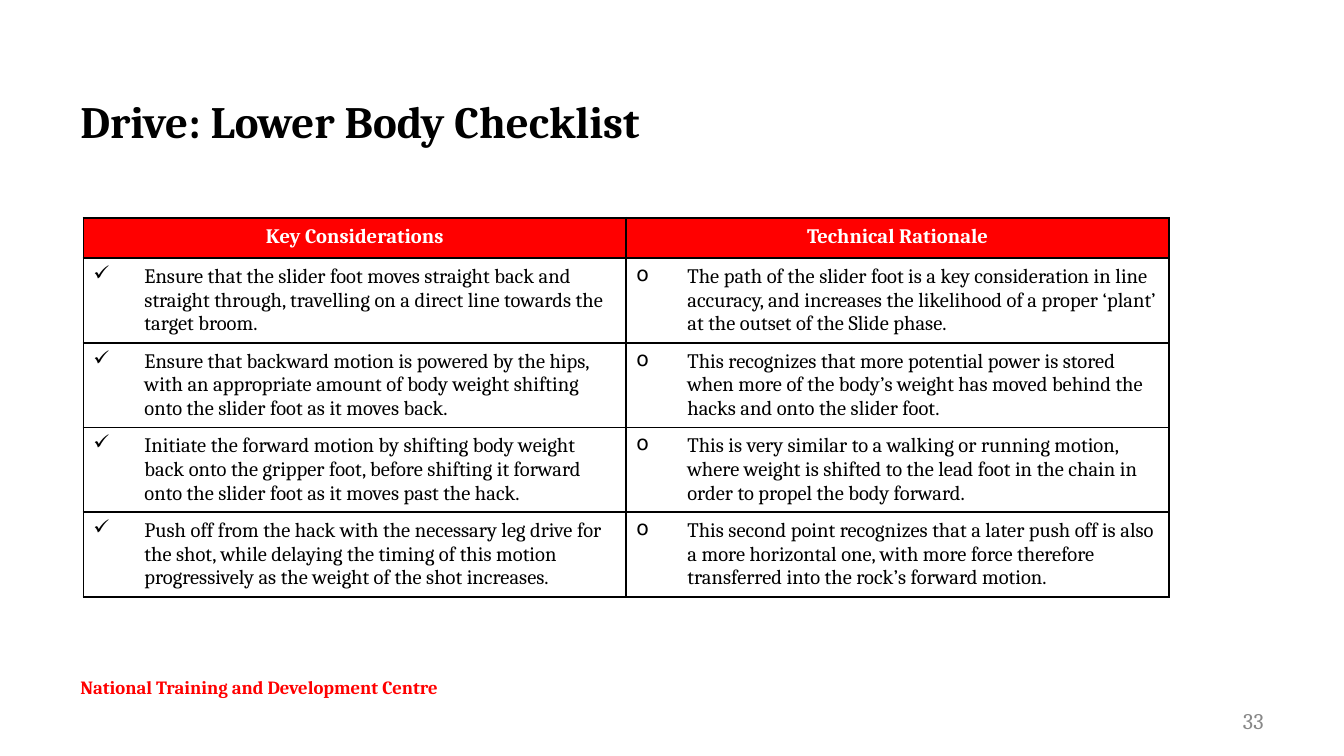
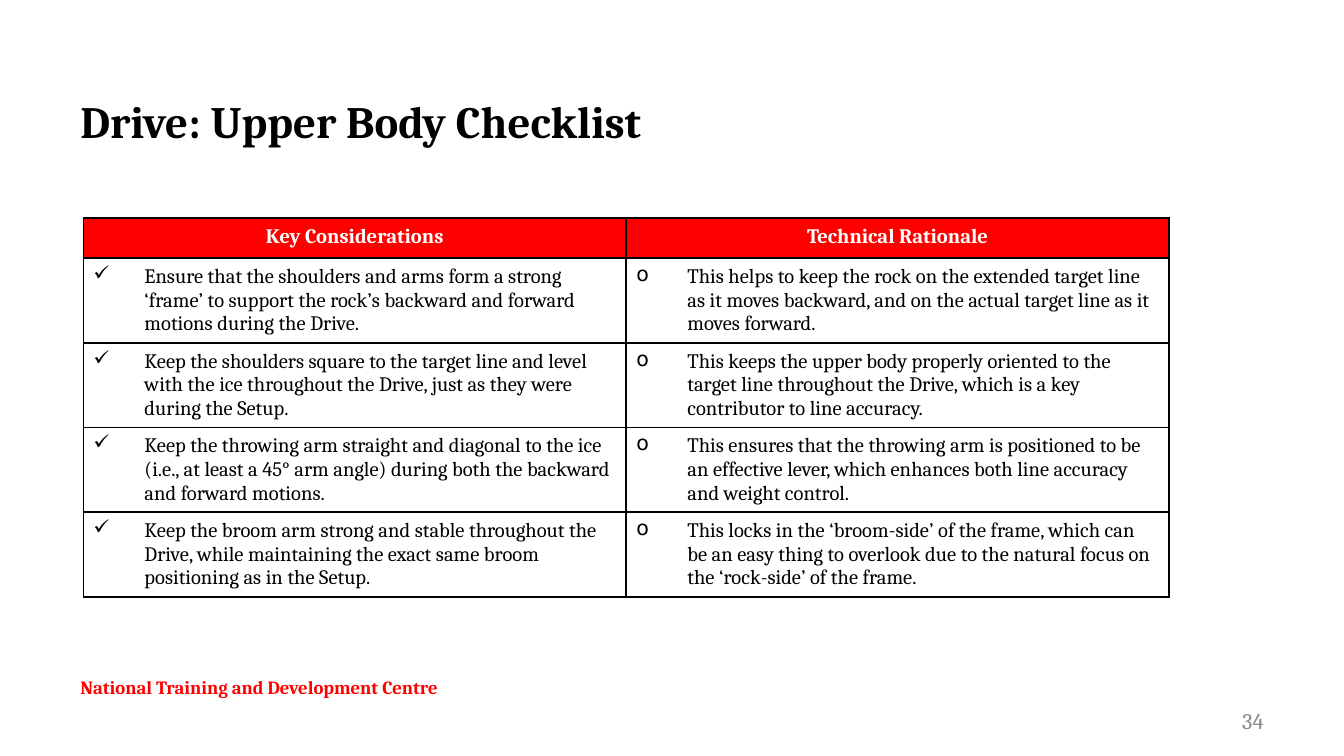
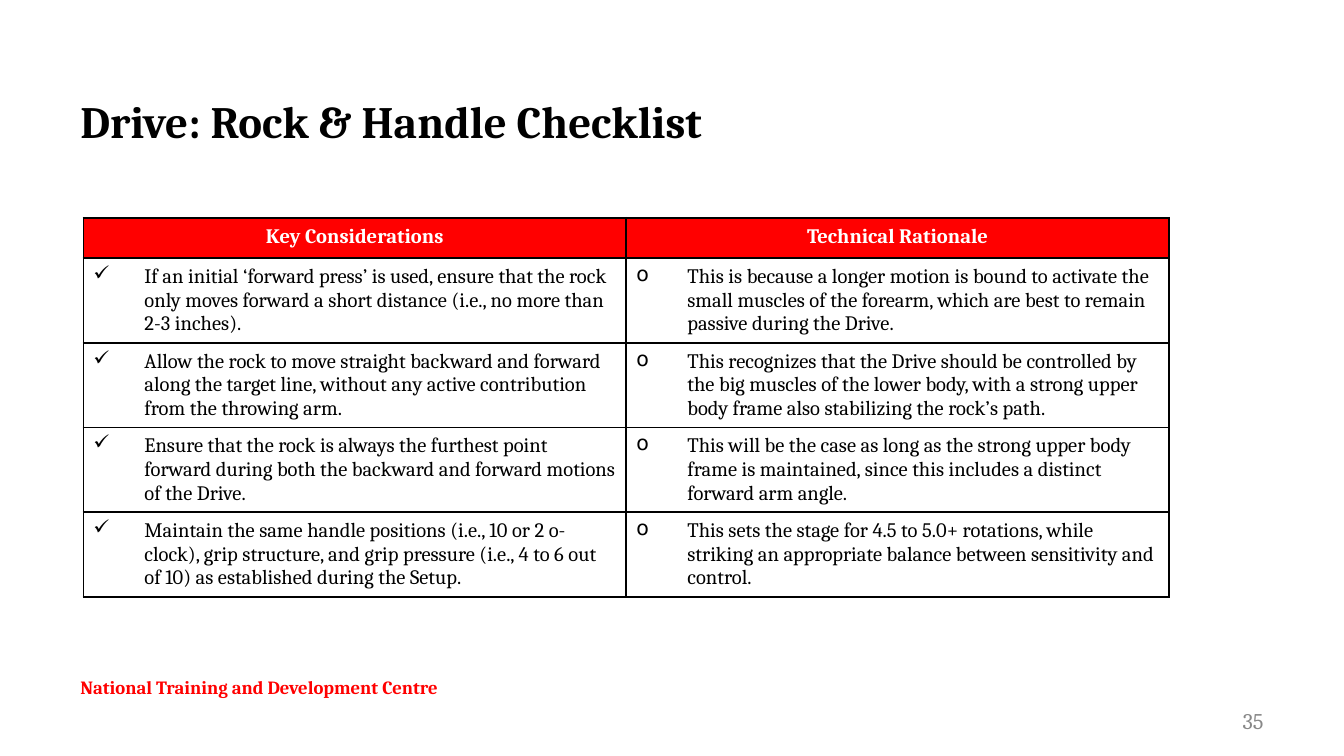
from lxml import etree
from pptx import Presentation
from pptx.dml.color import RGBColor
from pptx.enum.text import MSO_ANCHOR, PP_ALIGN
from pptx.oxml.ns import qn
from pptx.util import Inches, Pt

TOP, MIDDLE = MSO_ANCHOR.TOP, MSO_ANCHOR.MIDDLE
LEFT, CENTER, RIGHT = PP_ALIGN.LEFT, PP_ALIGN.CENTER, PP_ALIGN.RIGHT
BLANK_LAYOUT = 6
SLIDE_WIDTH = 10
SLIDE_HEIGHT = SLIDE_WIDTH * 9 / 16
FONT = "Cambria"
BLACK, WHITE, RED, GRAY = "000000", "FFFFFF", "FF0000", "888888"

FOOTER = "National Training and Development Centre"
HEADERS = ["Key Considerations", "Technical Rationale"]
BULLETS = ["✓", "o"]
COLUMN_WIDTH = 4.04
HEADER_HEIGHT, ROW_HEIGHT = 0.3, 0.63
BULLET_INDENT = 0.38
FIRST_PAGE = 33

CHECKLISTS = [
    ("Drive: Lower Body Checklist", [
        ("Ensure that the slider foot moves straight back and straight through, "
         "travelling on a direct line towards the target broom.",
         "The path of the slider foot is a key consideration in line accuracy, and "
         "increases the likelihood of a proper ‘plant’ at the outset of the Slide phase."),
        ("Ensure that backward motion is powered by the hips, with an appropriate "
         "amount of body weight shifting onto the slider foot as it moves back.",
         "This recognizes that more potential power is stored when more of the body’s "
         "weight has moved behind the hacks and onto the slider foot."),
        ("Initiate the forward motion by shifting body weight back onto the gripper "
         "foot, before shifting it forward onto the slider foot as it moves past the hack.",
         "This is very similar to a walking or running motion, where weight is shifted "
         "to the lead foot in the chain in order to propel the body forward."),
        ("Push off from the hack with the necessary leg drive for the shot, while delaying "
         "the timing of this motion progressively as the weight of the shot increases.",
         "This second point recognizes that a later push off is also a more horizontal "
         "one, with more force therefore transferred into the rock’s forward motion."),
    ]),
    ("Drive: Upper Body Checklist", [
        ("Ensure that the shoulders and arms form a strong ‘frame’ to support the "
         "rock’s backward and forward motions during the Drive.",
         "This helps to keep the rock on the extended target line as it moves backward, "
         "and on the actual target line as it moves forward."),
        ("Keep the shoulders square to the target line and level with the ice "
         "throughout the Drive, just as they were during the Setup.",
         "This keeps the upper body properly oriented to the target line throughout "
         "the Drive, which is a key contributor to line accuracy."),
        ("Keep the throwing arm straight and diagonal to the ice (i.e., at least a 45° "
         "arm angle) during both the backward and forward motions.",
         "This ensures that the throwing arm is positioned to be an effective lever, "
         "which enhances both line accuracy and weight control."),
        ("Keep the broom arm strong and stable throughout the Drive, while maintaining "
         "the exact same broom positioning as in the Setup.",
         "This locks in the ‘broom-side’ of the frame, which can be an easy thing to "
         "overlook due to the natural focus on the ‘rock-side’ of the frame."),
    ]),
    ("Drive: Rock & Handle Checklist", [
        ("If an initial ‘forward press’ is used, ensure that the rock only moves "
         "forward a short distance (i.e., no more than 2-3 inches).",
         "This is because a longer motion is bound to activate the small muscles of "
         "the forearm, which are best to remain passive during the Drive."),
        ("Allow the rock to move straight backward and forward along the target line, "
         "without any active contribution from the throwing arm.",
         "This recognizes that the Drive should be controlled by the big muscles of the "
         "lower body, with a strong upper body frame also stabilizing the rock’s path."),
        ("Ensure that the rock is always the furthest point forward during both the "
         "backward and forward motions of the Drive.",
         "This will be the case as long as the strong upper body frame is maintained, "
         "since this includes a distinct forward arm angle."),
        ("Maintain the same handle positions (i.e., 10 or 2 o-clock), grip structure, "
         "and grip pressure (i.e., 4 to 6 out of 10) as established during the Setup.",
         "This sets the stage for 4.5 to 5.0+ rotations, while striking an appropriate "
         "balance between sensitivity and control."),
    ]),
]


def rgb(color):
    return RGBColor.from_string(color)


def write(paragraph, text, size, color, bold=False, align=LEFT):
    paragraph.text = text
    paragraph.alignment = align
    font = paragraph.font
    font.name = FONT
    font.size = Pt(size)
    font.bold = bold
    font.color.rgb = rgb(color)


def add_text(slide, box, text, size, color, bold=False, align=LEFT, anchor=MIDDLE):
    frame = slide.shapes.add_textbox(*map(Inches, box)).text_frame
    frame.word_wrap = True
    frame.vertical_anchor = anchor
    write(frame.paragraphs[0], text, size, color, bold, align)


def add_bullet(paragraph, character):
    properties = paragraph._p.get_or_add_pPr()
    properties.set("marL", str(Inches(BULLET_INDENT)))
    properties.set("indent", str(-Inches(BULLET_INDENT)))
    etree.SubElement(properties, qn("a:buChar"), char=character)


def add_borders(cell):
    properties = cell._tc.get_or_add_tcPr()
    for side in ("lnL", "lnR", "lnT", "lnB"):
        line = etree.SubElement(properties, qn(f"a:{side}"), w=str(Pt(1)))
        fill = etree.SubElement(line, qn("a:solidFill"))
        etree.SubElement(fill, qn("a:srgbClr"), val=BLACK)


def fill_header_cell(cell, text):
    add_borders(cell)
    cell.fill.solid()
    cell.fill.fore_color.rgb = rgb(RED)
    write(cell.text_frame.paragraphs[0], text, 11, WHITE, True, CENTER)


def fill_point_cell(cell, text, bullet):
    add_borders(cell)
    cell.fill.background()
    cell.vertical_anchor = MIDDLE
    cell.margin_left = cell.margin_right = Pt(5.4)
    cell.margin_top = cell.margin_bottom = Inches(0.04)
    paragraph = cell.text_frame.paragraphs[0]
    add_bullet(paragraph, bullet)
    write(paragraph, text, 11, BLACK)


def add_checklist(slide, points):
    width = COLUMN_WIDTH * len(HEADERS)
    height = HEADER_HEIGHT + ROW_HEIGHT * len(points)
    table = slide.shapes.add_table(
        len(points) + 1, len(HEADERS),
        Inches(0.62), Inches(1.62), Inches(width), Inches(height)).table
    table.horz_banding = False
    for column in table.columns:
        column.width = Inches(COLUMN_WIDTH)
    for index, row in enumerate(table.rows):
        row.height = Inches(ROW_HEIGHT if index else HEADER_HEIGHT)
    for column, header in enumerate(HEADERS):
        fill_header_cell(table.cell(0, column), header)
    for row, point in enumerate(points, 1):
        for column, text in enumerate(point):
            fill_point_cell(table.cell(row, column), text, BULLETS[column])


def add_checklist_slide(presentation, page, title, points):
    slide = presentation.slides.add_slide(presentation.slide_layouts[BLANK_LAYOUT])
    add_text(slide, (7.17, 5.21, 2.33, 0.3), str(page), 12, GRAY, align=RIGHT)
    add_text(slide, (0.5, 0.43, 8.13, 0.94), title, 24, BLACK, bold=True)
    add_text(slide, (0.5, 4.98, 3.79, 0.44), FOOTER, 10, RED, bold=True, anchor=TOP)
    add_checklist(slide, points)


def main():
    presentation = Presentation()
    presentation.slide_width = Inches(SLIDE_WIDTH)
    presentation.slide_height = Inches(SLIDE_HEIGHT)
    for page, (title, points) in enumerate(CHECKLISTS, FIRST_PAGE):
        add_checklist_slide(presentation, page, title, points)
    presentation.save("out.pptx")


if __name__ == "__main__":
    main()
